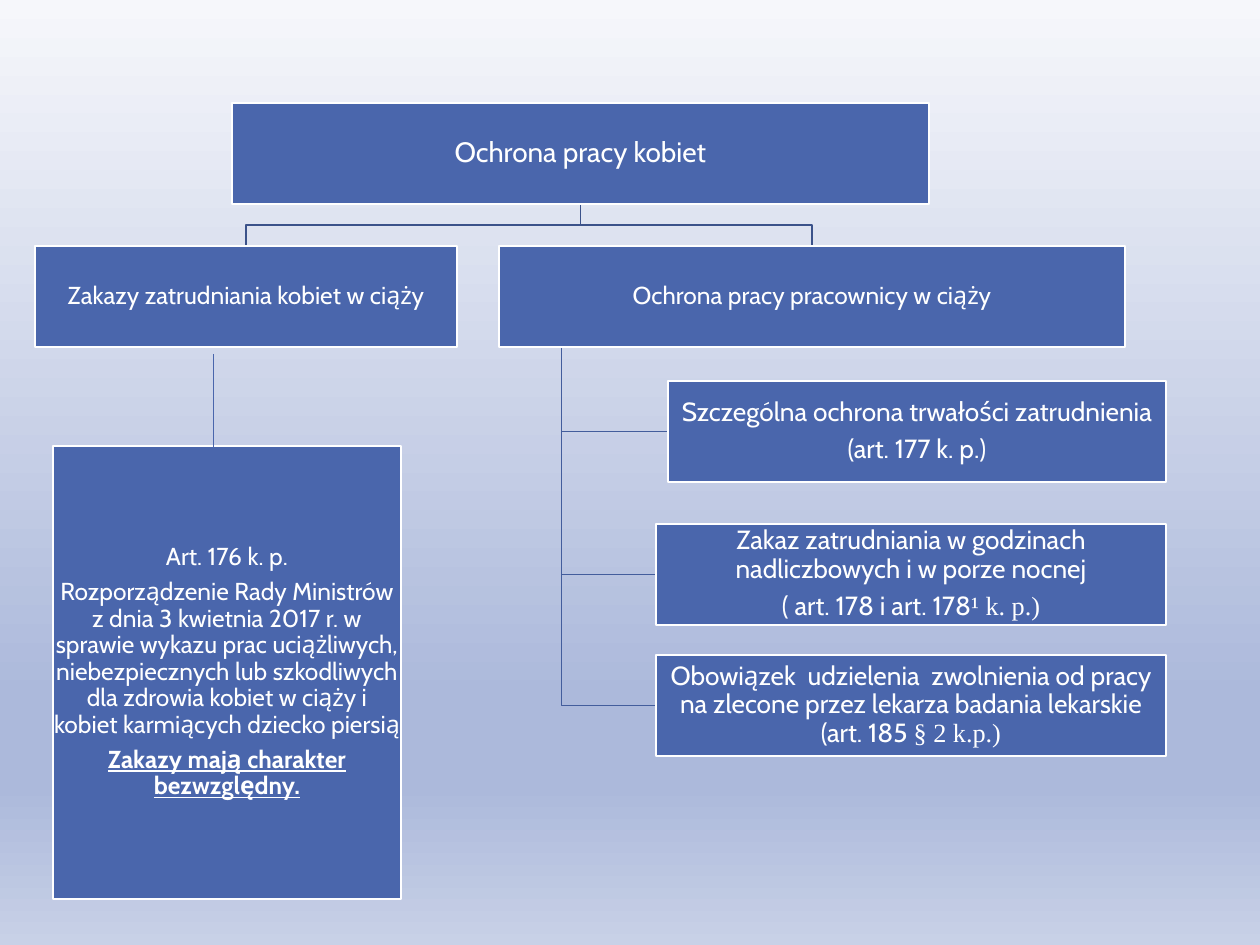
"""Builds a slide with a hierarchy chart on the protection of women's work."""
from lxml import etree
from pptx import Presentation
from pptx.dml.color import RGBColor
from pptx.enum.shapes import MSO_CONNECTOR, MSO_SHAPE
from pptx.enum.text import MSO_ANCHOR, PP_ALIGN
from pptx.oxml.ns import qn
from pptx.util import Emu, Pt

RECT, STRAIGHT = MSO_SHAPE.RECTANGLE, MSO_CONNECTOR.STRAIGHT
MIDDLE, CENTER = MSO_ANCHOR.MIDDLE, PP_ALIGN.CENTER
PX = 914400 // 126
FONT, SERIF = "Cabin", "Times New Roman"
FILL, WHITE, TOP_LINE, SIDE_LINE = "4A66AC", "FFFFFF", "3B528A", "435D9C"
BACKGROUND = [(0, "F6F7FB"), (74, "ACB9DB"), (83, "ACB9DB"), (100, "C8D1E7")]
BOX_H = 101

ROOT = ((232, 103, 697, BOX_H), 16, [[("Ochrona pracy kobiet", {})]])
BANS = ((35, 246, 422, BOX_H), 14, [[("Zakazy zatrudniania kobiet w ciąży", {})]])
PROTECTION = ((499, 246, 626, BOX_H), 14, [[("Ochrona pracy pracownicy w ciąży", {})]])
REGULATION = ((53, 446, 348, 453), 14, [
    [("Art. 176 k. p.", {})],
    [("Rozporządzenie Rady Ministrów z dnia 3 kwietnia 2017 r. w sprawie wykazu prac "
      "uciążliwych, niebezpiecznych lub szkodliwych dla zdrowia kobiet w ciąży i kobiet "
      "karmiących dziecko piersią", {})],
    [("Zakazy mają charakter bezwzględny.", {"bold": True, "underline": True})],
])
RIGHTS = [
    ((668, 381, 498, BOX_H), 15, [
        [("Szczególna ochrona trwałości zatrudnienia", {})],
        [("(art. 177 k. p.)", {})]]),
    ((656, 524, 510, BOX_H), 15, [
        [("Zakaz zatrudniania w godzinach nadliczbowych i w porze nocnej", {})],
        [("( art. 178 i art. 178", {}), ("¹ k. p.)", {"font": SERIF})]]),
    ((656, 655, 510, BOX_H), 15, [
        [("Obowiązek  udzielenia  zwolnienia od pracy na zlecone przez lekarza badania "
          "lekarskie (art. 185 ", {}), ("§ 2 k.p.)", {"font": SERIF})]]),
]
BAN_LINK = (213, 354, 213, 453)


def rgb(value):
    return RGBColor.from_string(value)


def px(*values):
    return [Emu(round(v * PX)) for v in values]


def add_run(p, text, size, font=FONT, bold=False, underline=False):
    r = p.add_run()
    r.text = text
    r.font.name, r.font.size = font, Pt(size)
    r.font.bold, r.font.underline = bold, underline
    r.font.color.rgb = rgb(WHITE)


def add_box(s, rect, size, paragraphs):
    sp = s.shapes.add_shape(RECT, *px(*rect))
    sp.shadow.inherit = False
    sp.fill.solid()
    sp.fill.fore_color.rgb = rgb(FILL)
    sp.line.color.rgb, sp.line.width = rgb(WHITE), Pt(1)
    tf = sp.text_frame
    tf.word_wrap, tf.vertical_anchor = True, MIDDLE
    tf.margin_left = tf.margin_right = tf.margin_top = tf.margin_bottom = px(1)[0]
    for i, runs in enumerate(paragraphs):
        p = tf.add_paragraph() if i else tf.paragraphs[0]
        p.alignment, p.line_spacing, p.space_after = CENTER, 0.9, Pt(round(size * 0.35, 2))
        for text, style in runs:
            add_run(p, text, size, **style)


def add_path(s, points, color):
    points = [px(*point) for point in points]
    builder = s.shapes.build_freeform(*points[0])
    builder.add_line_segments(points[1:], close=False)
    sp = builder.convert_to_shape()
    sp.shadow.inherit = False
    sp.fill.background()
    sp.line.color.rgb, sp.line.width = rgb(color), Pt(1)


def link_below(s, parent, child):
    x1, y1 = parent[0] + parent[2] / 2, parent[1] + parent[3]
    x2, y2 = child[0] + child[2] / 2, child[1]
    mid = (y1 + y2) / 2
    add_path(s, [(x1, y1), (x1, mid), (x2, mid), (x2, y2)], TOP_LINE)


def link_side(s, parent, child):
    x, y = parent[0] + parent[2] / 10, child[1] + child[3] / 2
    add_path(s, [(x, parent[1] + parent[3]), (x, y), (child[0], y)], SIDE_LINE)


def set_background(s):
    fill = s.background.fill
    fill.gradient()
    fill.gradient_angle = 270
    stops = next(s.element.iter(qn("a:gsLst")))
    for stop in list(stops):
        stops.remove(stop)
    for percent, color in BACKGROUND:
        stop = etree.SubElement(stops, qn("a:gs"), pos=str(percent * 1000))
        etree.SubElement(stop, qn("a:srgbClr"), val=color)


def main():
    prs = Presentation()
    prs.slide_width, prs.slide_height = px(1260, 945)
    s = prs.slides.add_slide(prs.slide_layouts[6])
    set_background(s)
    for right in reversed(RIGHTS):
        link_side(s, PROTECTION[0], right[0])
    for branch in (PROTECTION, BANS):
        link_below(s, ROOT[0], branch[0])
    for box in [ROOT, BANS, REGULATION, PROTECTION, *RIGHTS]:
        add_box(s, *box)
    line = s.shapes.add_connector(STRAIGHT, *px(*BAN_LINK))
    line.line.color.rgb, line.line.width = rgb(FILL), Pt(0.5)
    etree.SubElement(line.element.spPr, qn("a:effectLst"))
    prs.save("out.pptx")


if __name__ == "__main__":
    main()
